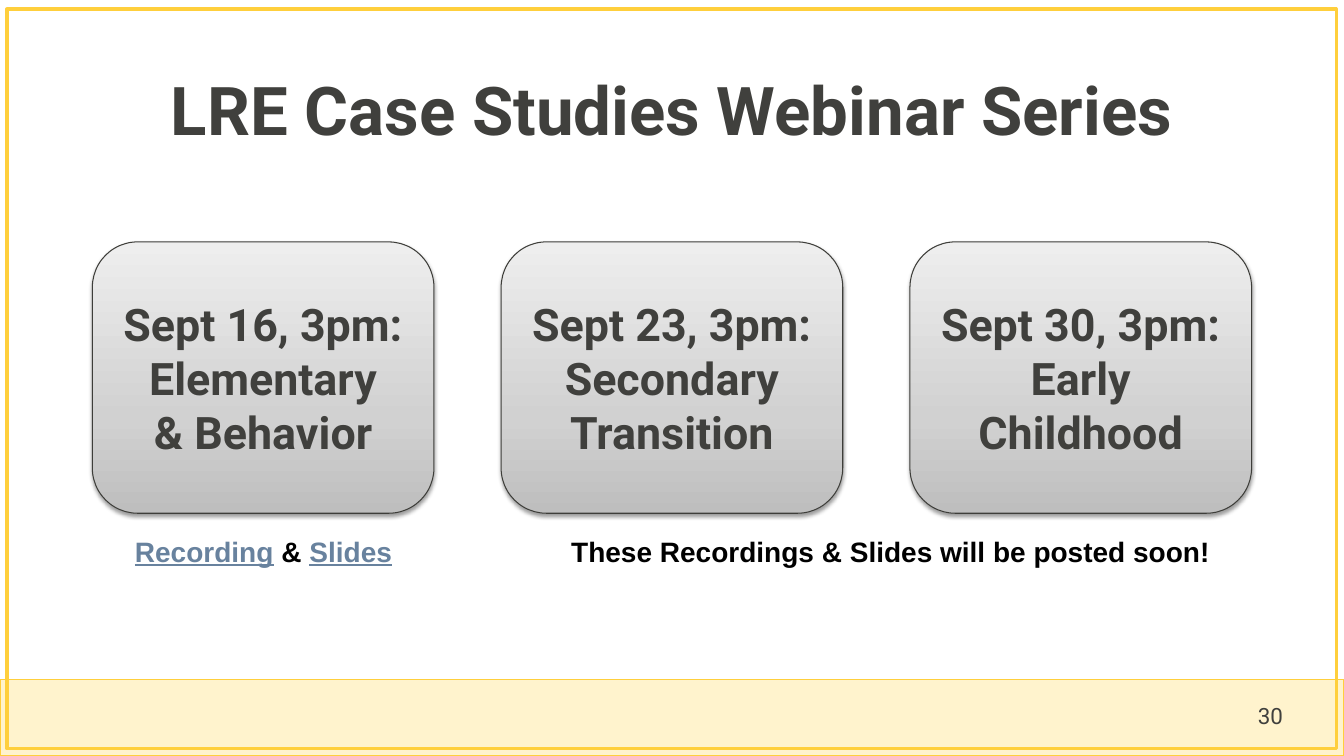
from lxml.etree import SubElement
from pptx import Presentation
from pptx.dml.color import RGBColor
from pptx.enum.shapes import MSO_SHAPE as Shape
from pptx.enum.text import MSO_ANCHOR as Anchor, PP_ALIGN as Align
from pptx.oxml.ns import qn
from pptx.util import Pt

COLORS = {
    "gold": "FFCF3C", "cream": "FFF3CD", "text": "40403D", "outline": "3E3E3A",
    "link": "68829E", "black": "000000",
}
CARD_GRADIENT = {0: "BEBEBE", 35: "D1D1D1", 100: "EEEEEE"}

HEADING = {"name": "Roboto", "size": Pt(48), "bold": True}
CARD_FONT = {"name": "Roboto", "size": Pt(32), "bold": True}
NUMBER_FONT = {"name": "Roboto", "size": Pt(16)}
NOTE_FONT = {"name": "Arial", "size": Pt(20), "bold": True}
LINK_FONT = {**NOTE_FONT, "underline": True}

CARD_LEFT, CARD_TOP, CARD_WIDTH, CARD_HEIGHT = 66, 172.8, 244, 193.8
CARD_STEP = 292
CARDS = [
    ["Sept 16, 3pm:", "Elementary", "& Behavior"],
    ["Sept 23, 3pm:", "Secondary Transition"],
    ["Sept 30, 3pm:", "Early Childhood"],
]


def color(name):
    return RGBColor.from_string(COLORS[name])


def write(shape, paragraphs, align=Align.CENTER, anchor=Anchor.MIDDLE, spacing=None):
    """Fill a shape with paragraphs, each a list of (text, font, color) runs."""
    frame = shape.text_frame
    frame.word_wrap = True
    frame.vertical_anchor = anchor
    for index, runs in enumerate(paragraphs):
        paragraph = frame.add_paragraph() if index else frame.paragraphs[0]
        paragraph.alignment = align
        paragraph.line_spacing = spacing
        for text, font, color_name in runs:
            run = paragraph.add_run()
            run.text = text
            for attribute, value in font.items():
                setattr(run.font, attribute, value)
            run.font.color.rgb = color(color_name)


def add_text(slide, box, runs, **layout):
    shape = slide.shapes.add_textbox(*map(Pt, box))
    write(shape, [runs], **layout)


def add_box(slide, kind, box, line, width, fill=None):
    shape = slide.shapes.add_shape(kind, *map(Pt, box))
    shape.shadow.inherit = False
    shape.line.color.rgb = color(line)
    shape.line.width = Pt(width)
    if fill:
        shape.fill.solid()
        shape.fill.fore_color.rgb = color(fill)
    else:
        shape.fill.background()
    return shape


def add_color_xml(parent, hex_color):
    return SubElement(parent, qn("a:srgbClr"), val=hex_color)


def shade(shape):
    """Give a card its three-stop gradient and soft shadow."""
    shape.fill.gradient()
    shape.fill.gradient_angle = 90
    properties = shape._element.spPr
    stops = properties.find(qn("a:gradFill")).find(qn("a:gsLst"))
    for stop in list(stops):
        stops.remove(stop)
    for position, hex_color in CARD_GRADIENT.items():
        stop = SubElement(stops, qn("a:gs"), pos=str(position * 1000))
        add_color_xml(stop, hex_color)
    shadow = SubElement(
        properties.find(qn("a:effectLst")), qn("a:outerShdw"),
        blurRad=str(Pt(3.1)), dist=str(Pt(1.6)), dir="5400000", rotWithShape="0")
    shadow_color = add_color_xml(shadow, COLORS["black"])
    SubElement(shadow_color, qn("a:alpha"), val="38000")


def add_card(slide, column, lines):
    box = (CARD_LEFT + column * CARD_STEP, CARD_TOP, CARD_WIDTH, CARD_HEIGHT)
    card = add_box(slide, Shape.ROUNDED_RECTANGLE, box, "outline", 0.75)
    card.adjustments[0] = 0.167
    shade(card)
    write(card, [[(line, CARD_FONT, "text")] for line in lines])


def main():
    presentation = Presentation()
    presentation.slide_width, presentation.slide_height = Pt(960), Pt(540)
    slide = presentation.slides.add_slide(presentation.slide_layouts[6])

    # Footer band and frame
    add_box(slide, Shape.RECTANGLE, (0, 485.5, 960, 54), "gold", 1, "cream")
    add_box(slide, Shape.RECTANGLE, (5, 6.5, 949.5, 528.5), "gold", 2.25)

    # Title and slide number
    add_text(slide, (66, 28.8, 828, 104.4),
             [("LRE Case Studies Webinar Series", HEADING, "text")], spacing=0.9)
    add_text(slide, (891.5, 497, 50.4, 28.8),
             [("30", NUMBER_FONT, "text")], align=Align.LEFT)

    # Webinar cards
    for column, lines in enumerate(CARDS):
        add_card(slide, column, lines)

    # Notes under the cards
    add_text(slide, (72, 378, 232.5, 31.5),
             [("Recording", LINK_FONT, "link"), (" & ", NOTE_FONT, "black"),
              ("Slides", LINK_FONT, "link")], anchor=Anchor.TOP)
    add_text(slide, (385, 378, 502.5, 31.5),
             [("These Recordings & Slides will be posted soon!", NOTE_FONT, "black")],
             anchor=Anchor.TOP)

    presentation.save("out.pptx")


if __name__ == "__main__":
    main()
